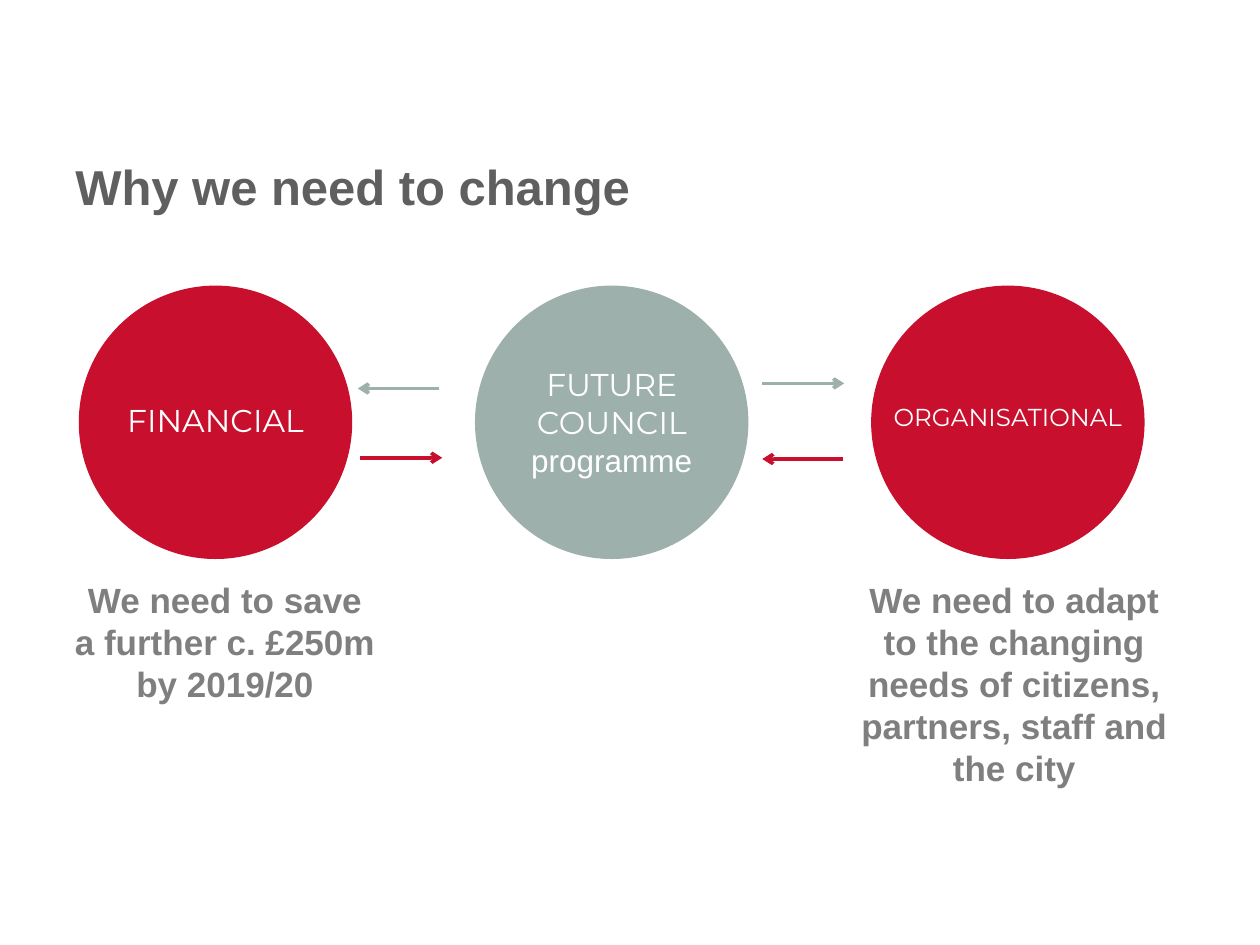
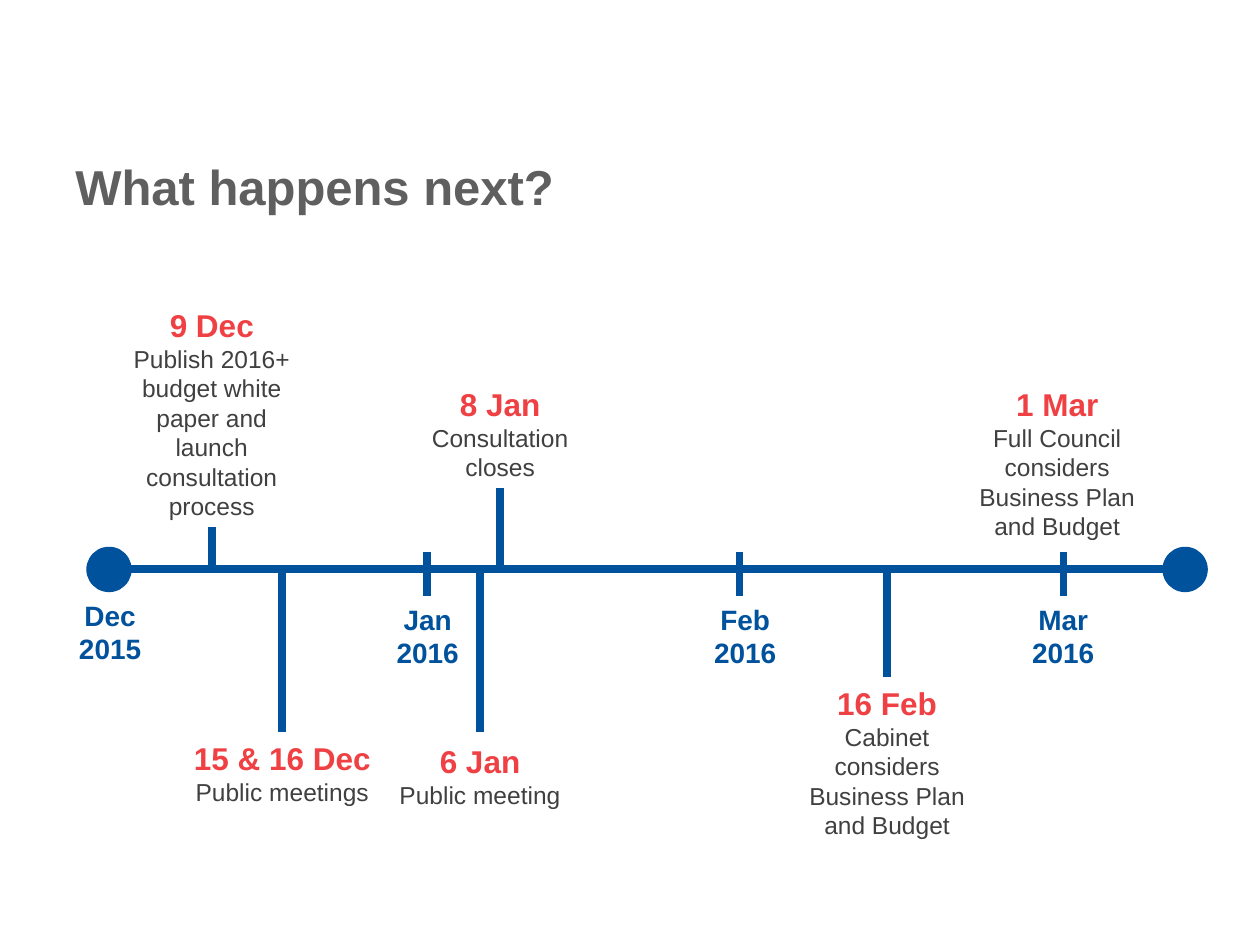
from lxml import etree
from pptx import Presentation
from pptx.dml.color import RGBColor
from pptx.enum import shapes, text
from pptx.oxml import ns
from pptx.util import Pt

HEADING_GREY = RGBColor(0x5F, 0x5F, 0x5F)
CAPTION_GREY = RGBColor(0x7F, 0x7F, 0x7F)
BODY_GREY = RGBColor(0x40, 0x40, 0x40)
RED = RGBColor(0xC8, 0x10, 0x2E)
SAGE = RGBColor(0x9D, 0xB0, 0xAC)
BLUE = RGBColor(0x00, 0x52, 0x9C)
DATE_RED = RGBColor(0xEF, 0x40, 0x44)
WHITE = RGBColor(0xFF, 0xFF, 0xFF)

TOP, MIDDLE, BOTTOM = (text.MSO_ANCHOR.TOP, text.MSO_ANCHOR.MIDDLE,
                       text.MSO_ANCHOR.BOTTOM)
CENTER, LEFT = text.PP_ALIGN.CENTER, text.PP_ALIGN.LEFT


def add_frame(slide, box, anchor=TOP, wrap=True):
    frame = slide.shapes.add_textbox(*map(Pt, box)).text_frame
    frame.word_wrap = wrap
    frame.vertical_anchor = anchor
    return frame


def write(frame, words, size=18, color=WHITE, bold=False, font="Arial", align=CENTER):
    """Append each line of words to the frame as a paragraph."""
    for line in words.split("\n"):
        first = frame.paragraphs[0]
        paragraph = first if not first.runs else frame.add_paragraph()
        paragraph.alignment = align
        run = paragraph.add_run()
        run.text = line
        run.font.size = Pt(size)
        run.font.name = font
        run.font.bold = bold
        run.font.color.rgb = color


def add_disc(slide, left, top, size, color):
    disc = slide.shapes.add_shape(shapes.MSO_SHAPE.OVAL, *map(Pt, (left, top, size, size)))
    disc.shadow.inherit = False
    disc.fill.solid()
    disc.fill.fore_color.rgb = color
    disc.line.color.rgb = color
    disc.line.width = Pt(0.75)


def add_line(slide, start, end, color, width, arrow=False):
    line = slide.shapes.add_connector(
        shapes.MSO_CONNECTOR.STRAIGHT, *map(Pt, (*start, *end)))
    line.line.color.rgb = color
    line.line.width = Pt(width)
    if arrow:
        etree.SubElement(line.line._get_or_add_ln(), ns.qn("a:tailEnd"), type="arrow")
    etree.SubElement(line._element.spPr, ns.qn("a:effectLst"))


def add_titled_slide(deck, title):
    slide = deck.slides.add_slide(deck.slide_layouts[6])
    heading = add_frame(slide, (36, 78.5, 664, 56), anchor=MIDDLE)
    write(heading, title, size=28, color=HEADING_GREY, bold=True, align=LEFT)
    return slide


def add_drivers(slide, left, top):
    """Three circles in a row, linked by arrows, with captions below."""
    size, pitch = 155.5, 226.4
    # Circles: colour, label nudge, and lines of (words, format)
    circles = [
        (RED, -1.4, [("FINANCIAL", {"font": "Montserrat"})]),
        (SAGE, -0.4, [("FUTURE\nCOUNCIL", {"font": "Montserrat"}), ("programme", {})]),
        (RED, -3.2, [("ORGANISATIONAL", {"font": "Montserrat", "size": 14})]),
    ]
    for column, (color, nudge, parts) in enumerate(circles):
        x = left + column * pitch
        add_disc(slide, x, top, size, color)
        label = add_frame(slide, (x, top + nudge, size, size), anchor=MIDDLE, wrap=False)
        for words, style in parts:
            write(label, words, **style)

    # Arrows: tail x, tip x, height
    for tail, tip, y, color in [
        (205.2, 159.1, 58.4, SAGE),
        (390.2, 437, 55.5, SAGE),
        (436.5, 390.2, 98.7, RED),
        (160.5, 207.3, 98, RED),
    ]:
        add_line(slide, (left + tail, top + y), (left + tip, top + y), color, 2, arrow=True)

    # Captions: x, width
    for x, width, words in [
        (-18, 202.3, "We need to save\na further c. £250m\nby 2019/20"),
        (437, 194.4, "We need to adapt to the changing needs of citizens, "
                     "partners, staff and the city"),
    ]:
        caption = add_frame(slide, (left + x, top + 163.5, width, 128))
        write(caption, words, size=20, color=CAPTION_GREY, bold=True)


def add_timeline(slide, left, axis, width):
    """Axis with month ticks, and events hung above or below it."""
    dot, weight = 25.2, 4.5
    add_line(slide, (left, axis), (left + width, axis), BLUE, weight)
    for x in (left, left + width):
        add_disc(slide, x - dot / 2, axis - dot / 2, dot, BLUE)

    # Months: tick x, label x, label drop
    month_width = 82.8
    for tick, label_x, drop, words in [
        (None, 0.6, 13, "Dec\n2015"),
        (181.8, 182.1, 15.1, "Jan\n2016"),
        (360.3, 363.5, 15.1, "Feb\n2016"),
        (545.4, 545.2, 15.1, "Mar\n2016"),
    ]:
        if tick is not None:
            x = left + tick
            add_line(slide, (x, axis - 10.1), (x, axis + 15.1), BLUE, weight)
        month = add_frame(
            slide, (left + label_x - month_width / 2, axis + drop, month_width, 46))
        write(month, words, size=16, color=BLUE, bold=True)

    # Events: x, stem length (negative is up), label distance from the axis
    event_width, event_height = 116.6, 131
    for x, stem, reach, date, words in [
        (58.7, -24.5, -24.5, "9 Dec",
         "Publish 2016+ budget white paper and\nlaunch consultation process"),
        (99, 92.9, 93.6, "15 & 16 Dec", "Public meetings"),
        (212, 92.9, 95, "6 Jan", "Public meeting"),
        (223.5, -46.8, -46.8, "8 Jan", "Consultation closes"),
        (444.6, 61.2, 61.9, "16 Feb", "Cabinet considers Business Plan and Budget"),
        (541.8, 0, -13, "1 Mar", "Full Council considers Business Plan and Budget"),
    ]:
        x += left
        if stem:
            add_line(slide, (x, axis), (x, axis + stem), BLUE, weight)
        above = reach < 0
        y = axis + reach - (event_height if above else 0)
        event = add_frame(slide, (x - event_width / 2, y, event_width, event_height),
                          anchor=BOTTOM if above else TOP)
        write(event, date, color=DATE_RED, bold=True)
        write(event, words, size=14, color=BODY_GREY)


def main():
    deck = Presentation()
    deck.slide_width, deck.slide_height = Pt(720), Pt(540)
    add_drivers(add_titled_slide(deck, "Why we need to change"), 45.4, 163.6)
    add_timeline(add_titled_slide(deck, "What happens next?"), 62.3, 325.4, 614.9)
    deck.save("out.pptx")


if __name__ == "__main__":
    main()
